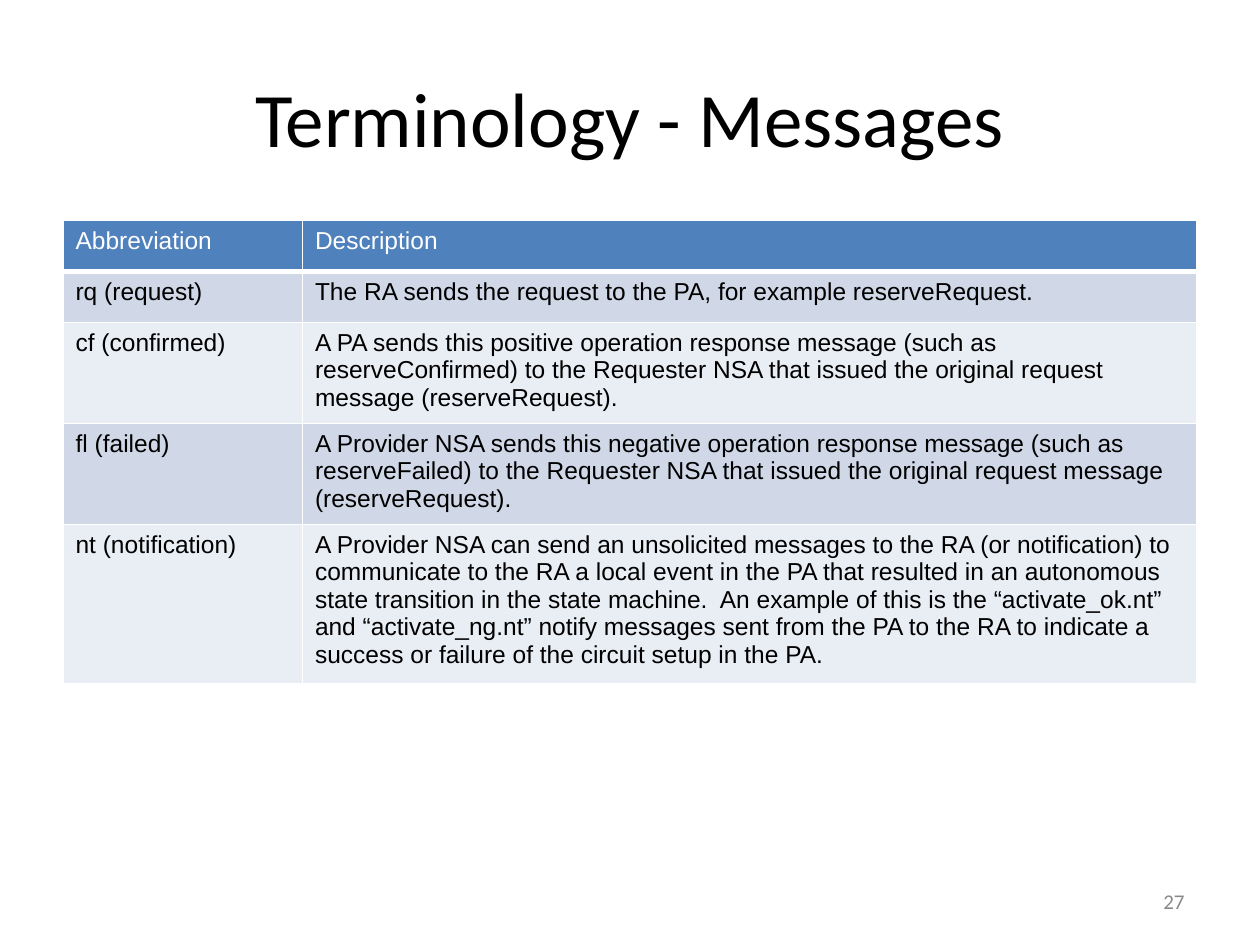
"""Build the slide that explains the message abbreviations."""
from dataclasses import dataclass

from lxml.etree import SubElement
from pptx import Presentation
from pptx.dml.color import RGBColor
from pptx.enum.text import MSO_ANCHOR, PP_ALIGN
from pptx.oxml.ns import qn
from pptx.util import Pt


@dataclass
class Label:
    text: str
    box: tuple[float, float, float, float]
    size: float
    color: str
    align: PP_ALIGN


@dataclass
class Row:
    term: str
    text: str
    height: float
    fill: str
    color: str = "000000"
    base: float = 1


HEAD, DARK, PALE, WHITE = "4F81BD", "D0D8E8", "E9EDF4", "FFFFFF"
LEFT, TOP, WIDTHS = 36, 126, (136.8, 511.2)

LABELS = [
    Label("Terminology - Messages", (36, 21.6, 648, 90), 44, "000000", PP_ALIGN.CENTER),
    Label("27", (516, 500.5, 168, 28.75), 12, "898989", PP_ALIGN.RIGHT),
]
ROWS = [
    Row("Abbreviation", "Description", 29.2, HEAD, WHITE, 3),
    Row("rq (request)",
        "The RA sends the request to the PA, for example reserveRequest.",
        29.2, DARK),
    Row("cf (confirmed)",
        "A PA sends this positive operation response message (such as "
        "reserveConfirmed) to the Requester NSA that issued the original "
        "request message (reserveRequest).", 54, PALE),
    Row("fl (failed)",
        "A Provider NSA sends this negative operation response message (such "
        "as reserveFailed) to the Requester NSA that issued the original "
        "request message (reserveRequest).", 54, DARK),
    Row("nt (notification)",
        "A Provider NSA can send an unsolicited messages to the RA (or "
        "notification) to communicate to the RA a local event in the PA that "
        "resulted in an autonomous state transition in the state machine.  An "
        "example of this is the “activate_ok.nt” and “activate_ng.nt” notify "
        "messages sent from the PA to the RA to indicate a success or failure "
        "of the circuit setup in the PA.", 85, PALE),
]


def paint(item, color: str) -> None:
    item.rgb = RGBColor.from_string(color)


def write(frame, text: str, color: str, align: PP_ALIGN, style: dict) -> None:
    para = frame.paragraphs[0]
    para.alignment = align
    run = para.add_run()
    run.text = text
    for key, value in style.items():
        setattr(run.font, key, value)
    paint(run.font.color, color)


def add_label(slide, label: Label) -> None:
    frame = slide.shapes.add_textbox(*map(Pt, label.box)).text_frame
    frame.word_wrap = True
    frame.vertical_anchor = MSO_ANCHOR.MIDDLE
    style = {"name": "Calibri", "size": Pt(label.size)}
    write(frame, label.text, label.color, label.align, style)


def edge(cell, base: float) -> None:
    props = cell._tc.get_or_add_tcPr()
    for side, width in zip("LRTB", (1, 1, 1, base)):
        line = SubElement(props, qn(f"a:ln{side}"), w=str(Pt(width)))
        fill = SubElement(line, qn("a:solidFill"))
        SubElement(fill, qn("a:srgbClr"), val=WHITE)


def add_grid(slide, rows: list[Row]) -> None:
    high = sum(row.height for row in rows)
    shape = slide.shapes.add_table(
        len(rows), len(WIDTHS), Pt(LEFT), Pt(TOP), Pt(sum(WIDTHS)), Pt(high))
    table = shape.table
    for column, width in zip(table.columns, WIDTHS):
        column.width = Pt(width)
    style = {"name": "Arial", "size": Pt(14), "bold": False}
    for line, row in zip(table.rows, rows):
        line.height = Pt(row.height)
        for cell, text in zip(line.cells, (row.term, row.text)):
            edge(cell, row.base)
            cell.fill.solid()
            paint(cell.fill.fore_color, row.fill)
            write(cell.text_frame, text, row.color, PP_ALIGN.LEFT, style)


def main() -> None:
    deck = Presentation()
    deck.slide_width, deck.slide_height = Pt(720), Pt(540)
    slide = deck.slides.add_slide(deck.slide_layouts[6])
    for label in LABELS:
        add_label(slide, label)
    add_grid(slide, ROWS)
    deck.save("out.pptx")


if __name__ == "__main__":
    main()
